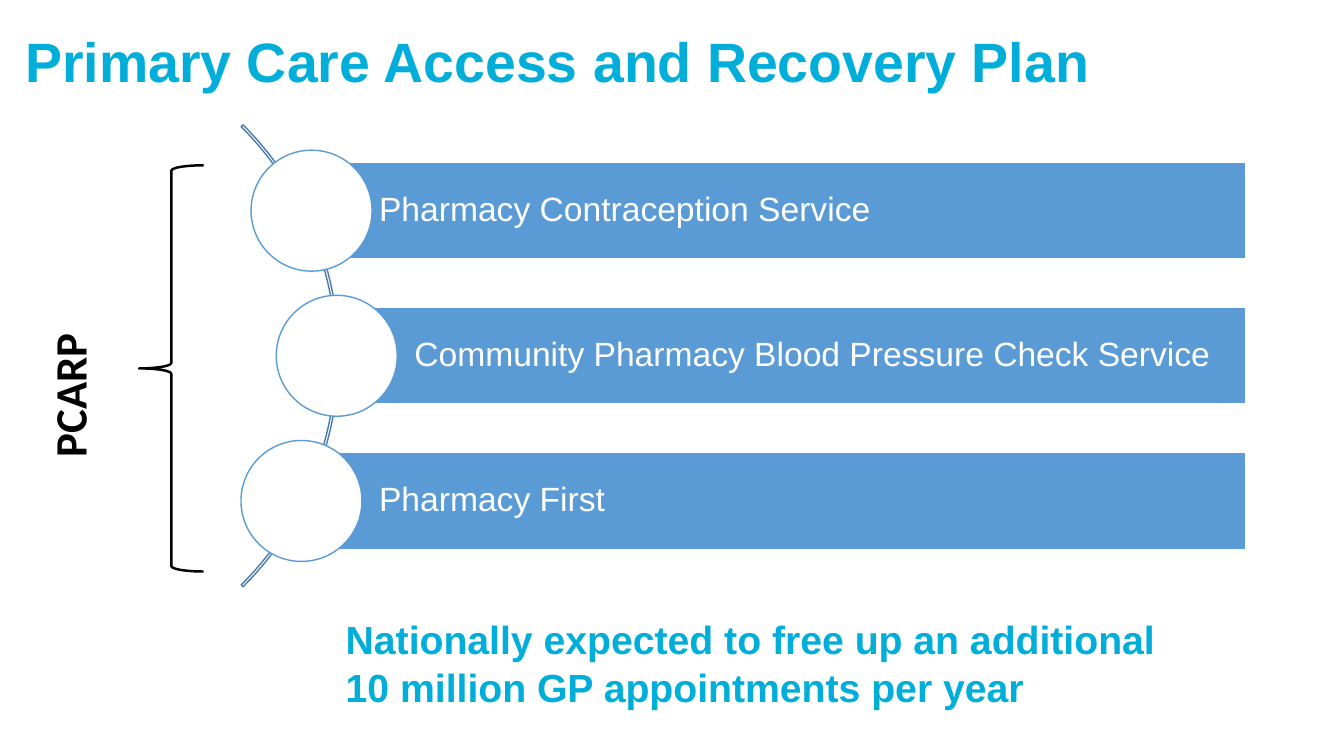
"""Build the Primary Care Access and Recovery Plan slide."""
from pptx import Presentation
from pptx.dml.color import RGBColor
from pptx.enum.shapes import MSO_SHAPE
from pptx.enum.text import MSO_ANCHOR, PP_ALIGN
from pptx.util import Inches, Pt

ARC, BAR, CIRCLE, BRACE = (MSO_SHAPE.BLOCK_ARC, MSO_SHAPE.RECTANGLE,
                           MSO_SHAPE.OVAL, MSO_SHAPE.LEFT_BRACE)
TOP, MIDDLE = MSO_ANCHOR.TOP, MSO_ANCHOR.MIDDLE
LEFT = PP_ALIGN.LEFT

CYAN = RGBColor(0x00, 0xAE, 0xD9)
BLUE = RGBColor(0x5B, 0x9B, 0xD5)
DARK_BLUE = RGBColor(0x49, 0x7C, 0xAB)
WHITE = RGBColor(0xFF, 0xFF, 0xFF)
BLACK = RGBColor(0x00, 0x00, 0x00)

ROW_CENTER, ROW_PITCH = 2.09, 1.44
BAR_HEIGHT, BAR_RIGHT, DIAMETER = 0.96, 12.36, 1.2
SERVICES = [
    ("Pharmacy Contraception Service", 3, 2.49),
    ("Community Pharmacy Blood Pressure Check Service", 3.35, 2.74),
    ("Pharmacy First", 3, 2.39),
]

deck = Presentation()
deck.slide_width, deck.slide_height = Inches(13.33), Inches(7.5)
page = deck.slides.add_slide(deck.slide_layouts[5])


def add_outline(kind, left, top, width, height, line, weight, fill=None):
    shape = page.shapes.add_shape(
        kind, Inches(left), Inches(top), Inches(width), Inches(height))
    shape.shadow.inherit = False
    if fill is None:
        shape.fill.background()
    else:
        shape.fill.solid()
        shape.fill.fore_color.rgb = fill
    shape.line.color.rgb = line
    shape.line.width = Pt(weight)
    return shape


def write(box, text, size, color, bold=True, name="Arial", spacing=1.0):
    box.text_frame.word_wrap = True
    para = box.text_frame.paragraphs[0]
    para.alignment = LEFT
    para.line_spacing = spacing
    span = para.add_run()
    span.text = text
    span.font.name, span.font.size, span.font.bold = name, Pt(size), bold
    span.font.color.rgb = color


title = page.shapes.title
title.left, title.top = Inches(0.15), Inches(0.19)
title.width, title.height = Inches(11.5), Inches(1.45)
title.text_frame.vertical_anchor = TOP
title.text_frame.margin_top = Inches(0.15)
write(title, "Primary Care Access and Recovery Plan", 39.6, CYAN, spacing=0.9)

arc = add_outline(ARC, -3.12, 0.29, 6.48, 6.48, DARK_BLUE, 1)
for index, value in enumerate((189, 27, 0.004)):
    arc.adjustments[index] = value

for row, (service, bar_left, circle_left) in enumerate(SERVICES):
    center = ROW_CENTER + row * ROW_PITCH
    bar = add_outline(BAR, bar_left, center - BAR_HEIGHT / 2,
                      BAR_RIGHT - bar_left, BAR_HEIGHT, WHITE, 1, BLUE)
    frame = bar.text_frame
    frame.vertical_anchor = MIDDLE
    frame.margin_left = Inches(0.76)
    frame.margin_top = frame.margin_right = frame.margin_bottom = Inches(0.07)
    write(bar, service, 24, WHITE, bold=False, spacing=0.9)
    add_outline(CIRCLE, circle_left, center - DIAMETER / 2,
                DIAMETER, DIAMETER, BLUE, 1, WHITE)

label = page.shapes.add_textbox(
    Inches(-0.2), Inches(3.43), Inches(1.77), Inches(0.64))
label.rotation = 270
write(label, "PCARP", 32, BLACK, name="Calibri")

add_outline(BRACE, 1.38, 1.64, 0.64, 4.03, BLACK, 1.75)

outcome = page.shapes.add_textbox(
    Inches(3.33), Inches(6.06), Inches(8.61), Inches(1.04))
write(outcome, "Nationally expected to free up an additional "
      "10 million GP appointments per year", 28, CYAN)

deck.save("out.pptx")
